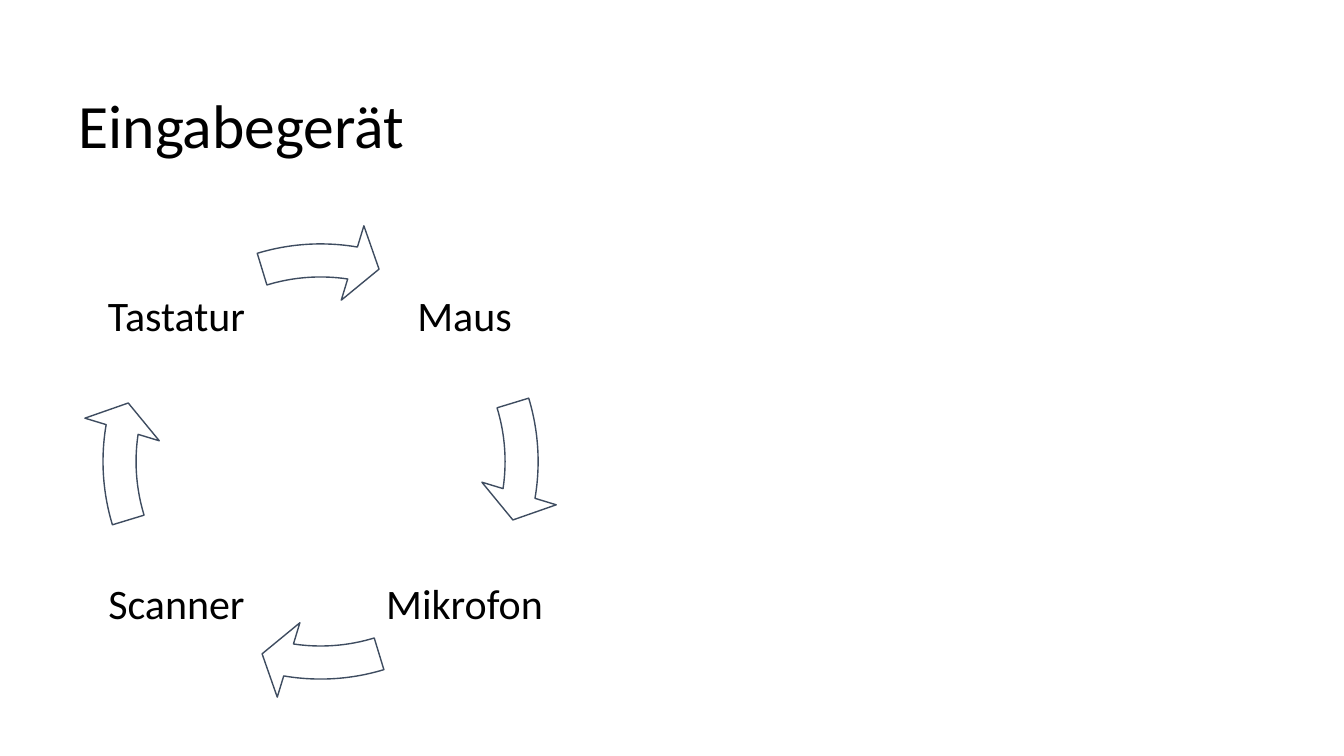
from dataclasses import dataclass

from pptx import Presentation
from pptx.dml.color import RGBColor as RGB
from pptx.enum.shapes import MSO_SHAPE as Shape
from pptx.enum.text import MSO_ANCHOR as Anchor, PP_ALIGN as Align
from pptx.util import Cm, Pt


@dataclass(frozen=True)
class Theme:
    font: str = "Calibri"
    ink: RGB = RGB(0x00, 0x00, 0x00)
    fill: RGB = RGB(0xFF, 0xFF, 0xFF)
    edge: RGB = RGB(0x3E, 0x4C, 0x60)
    title: int = 44
    label: int = 30


theme = Theme()
deck = Presentation()
deck.slide_width, deck.slide_height = Cm(33.87), Cm(19.05)
slide = deck.slides.add_slide(deck.slide_layouts[6])


def add_text(text, *, left, top, width, height, size, align=Align.LEFT, pad=0.25):
    """Add a vertically centred text box; lengths are in centimetres."""
    box = slide.shapes.add_textbox(Cm(left), Cm(top), Cm(width), Cm(height))
    frame = box.text_frame
    frame.word_wrap = True
    frame.vertical_anchor = Anchor.MIDDLE
    frame.margin_left = frame.margin_right = Cm(pad)
    frame.margin_top = frame.margin_bottom = Cm(min(pad, 0.13))
    para = frame.paragraphs[0]
    para.alignment = align
    para.line_spacing = 0.9
    run = para.add_run()
    run.text = text
    run.font.name = theme.font
    run.font.size = Pt(size)
    run.font.color.rgb = theme.ink


add_text("Eingabegerät", left=1.73, top=1.4, width=29.21, height=3.68,
         size=theme.title)

# Cycle, clockwise from the upper right; each arrow follows its label
mid_x, mid_y = 8.08, 11.63
ring, side, reach = 12.09, 4.27, 3.63
# Arrow angles count 1/60000 degree, and adjustments are in units of 100000
turn = 360 * 0.6
devices = [("Maus", 1, -1), ("Mikrofon", 1, 1),
           ("Scanner", -1, 1), ("Tastatur", -1, -1)]

for step, (name, dx, dy) in enumerate(devices):
    add_text(name, left=mid_x + dx * reach - side / 2,
             top=mid_y + dy * reach - side / 2, width=side, height=side,
             size=theme.label, align=Align.CENTER, pad=0.1)

    arrow = slide.shapes.add_shape(
        Shape.CIRCULAR_ARROW, Cm(mid_x - ring / 2), Cm(mid_y - ring / 2),
        Cm(ring), Cm(ring))
    shift = step * turn / len(devices)
    shape_values = (0.069, 4.653, 5.495 + shift, (205.852 + shift) % turn, 0.081)
    for index, value in enumerate(shape_values):
        arrow.adjustments[index] = value
    arrow.shadow.inherit = False
    arrow.fill.solid()
    arrow.fill.fore_color.rgb = theme.fill
    arrow.line.color.rgb = theme.edge
    arrow.line.width = Pt(1)

deck.save("out.pptx")
